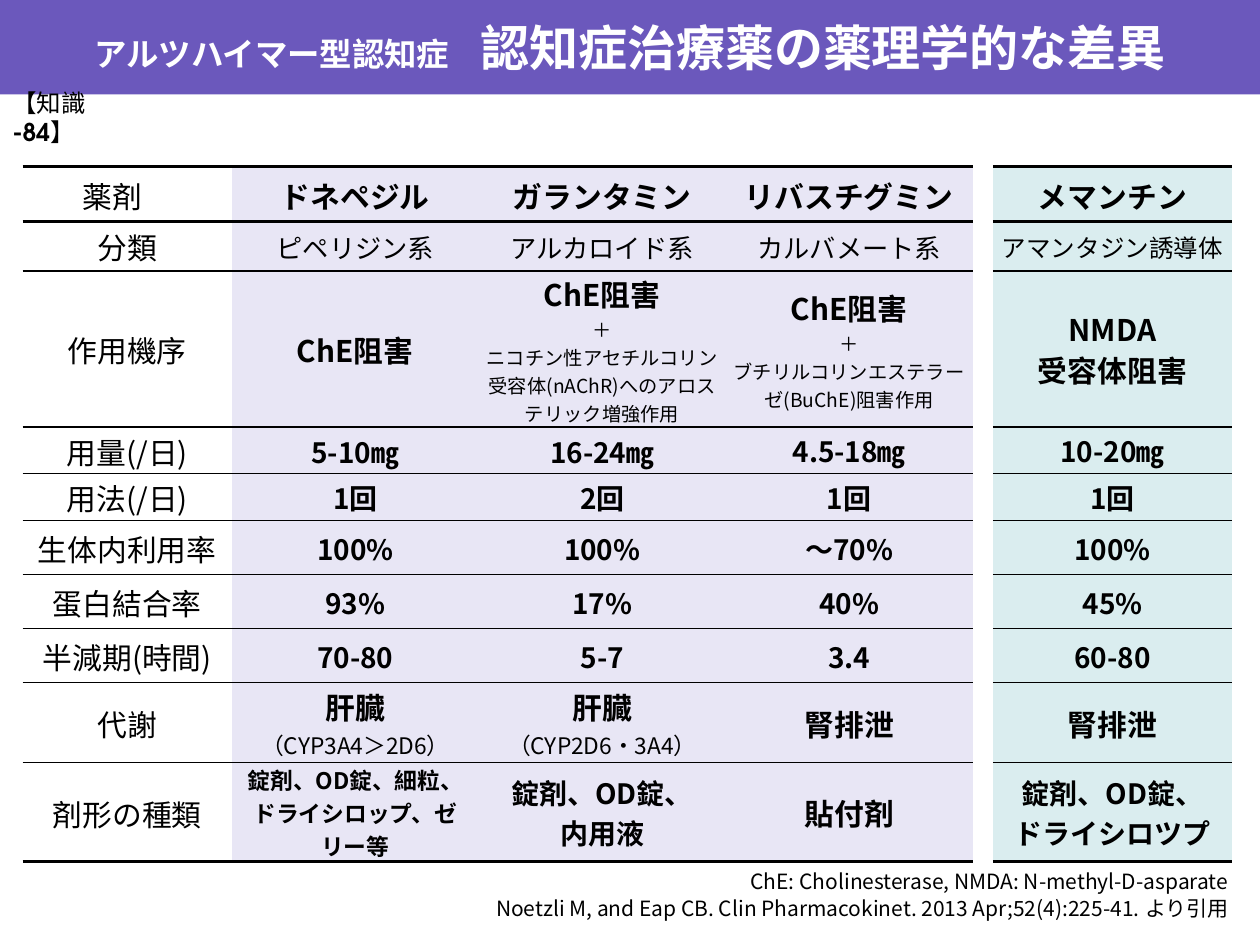
import pptx
import pptx.dml.color
import pptx.enum.shapes
import pptx.enum.text
import pptx.oxml
import pptx.oxml.ns
import pptx.util
from pptx.util import Inches

FONT = "Noto Sans CJK JP"
LABEL_FONT = "TeX Gyre Adventor"
BLACK, WHITE, PURPLE = "000000", "FFFFFF", "6B58BC"
LILAC, TEAL = "E8E6F5", "DAEDEF"
PLAIN_TABLE_STYLE = "{2D5ABB26-0587-4C30-8999-92F81FD0307C}"
ALIGN = pptx.enum.text.PP_ALIGN
MIDDLE = pptx.enum.text.MSO_ANCHOR.MIDDLE

COLUMN_WIDTHS = [1.66, 1.96, 1.96, 1.96, 0.16, 1.9]
COLUMN_FILLS = [None, LILAC, LILAC, LILAC, None, TEAL]
GAP_COLUMN = 4
ROW_HEIGHTS = [0.44, 0.39, 1.13, 0.37, 0.37, 0.43, 0.43, 0.43, 0.63, 0.62]
RULE_WIDTHS = [2.25, 2.25, 1, 1, 0.75, 0.75, 0.75, 0.75, 0.75, 0.5, 2.25]


def color(value):
    return pptx.dml.color.RGBColor.from_string(value)


def plain(size, *texts):
    return [(text, size, False) for text in texts]


def bold(size, *texts):
    return [(text, size, True) for text in texts]


def bold_each(size, *texts):
    return [bold(size, text) for text in texts]


DRUG_ROWS = [
    ("薬剤　", bold_each(17, "ドネペジル", "ガランタミン", "リバスチグミン", "メマンチン")),
    ("分類", [
        plain(15, "ピペリジン系"),
        plain(15, "アルカロイド系"),
        plain(15, "カルバメート系"),
        plain(14, "アマンタジン誘導体"),
    ]),
    ("作用機序", [
        bold(17, "ChE阻害"),
        bold(17, "ChE阻害") + plain(11, "＋", "ニコチン性アセチルコリン受容体(nAChR)へのアロステリック増強作用"),
        bold(17, "ChE阻害") + plain(11, "＋", "ブチリルコリンエステラーゼ(BuChE)阻害作用"),
        bold(17, "NMDA", "受容体阻害"),
    ]),
    ("用量(/日)", bold_each(16, "5-10㎎", "16-24㎎", "4.5-18㎎", "10-20㎎")),
    ("用法(/日)", bold_each(16, "1回", "2回", "1回", "1回")),
    ("生体内利用率", bold_each(16, "100%", "100%", "～70%", "100%")),
    ("蛋白結合率", bold_each(16, "93%", "17%", "40%", "45%")),
    ("半減期(時間)", bold_each(16, "70-80", "5-7", "3.4", "60-80")),
    ("代謝", [
        bold(17, "肝臓") + plain(13, "（CYP3A4＞2D6）"),
        bold(17, "肝臓") + plain(13, "（CYP2D6・3A4）"),
        bold(17, "腎排泄"),
        bold(17, "腎排泄"),
    ]),
    ("剤形の種類", [
        bold(13, "錠剤、OD錠、細粒、", "ドライシロップ、ゼリー等"),
        bold(16, "錠剤、OD錠、", "内用液"),
        bold(17, "貼付剤"),
        bold(16, "錠剤、OD錠、", "ドライシロツプ"),
    ]),
]


def add_run(paragraph, text, size, is_bold=False, value=BLACK, font=FONT):
    run = paragraph.add_run()
    run.text = text
    run.font.size = pptx.util.Pt(size)
    run.font.bold = is_bold
    run.font.color.rgb = color(value)
    run.font.name = font
    east_asian = pptx.oxml.parse_xml(
        f'<a:ea {pptx.oxml.ns.nsdecls("a")} typeface="{font}"/>')
    run.font._element.find(pptx.oxml.ns.qn("a:latin")).addnext(east_asian)


def add_text_box(slide, left, top, width, height, align, runs):
    box = slide.shapes.add_textbox(
        Inches(left), Inches(top), Inches(width), Inches(height))
    box.text_frame.word_wrap = True
    paragraph = box.text_frame.paragraphs[0]
    paragraph.alignment = align
    for run in runs:
        add_run(paragraph, *run)
    return box


def add_title_band(slide):
    band = slide.shapes.add_shape(
        pptx.enum.shapes.MSO_SHAPE.RECTANGLE, 0, 0, Inches(10), Inches(0.75))
    band.shadow.inherit = False
    band.fill.solid()
    band.fill.fore_color.rgb = color(PURPLE)
    band.line.fill.background()
    band.text_frame.vertical_anchor = MIDDLE
    paragraph = band.text_frame.paragraphs[0]
    paragraph.alignment = ALIGN.CENTER
    for text, size in [("アルツハイマー型認知症", 18.5), ("　", 18),
                       ("認知症治療薬の薬理学的な差異", 28)]:
        add_run(paragraph, text, size, True, WHITE)


def set_rules(cell, top, bottom):
    properties = cell._tc.get_or_add_tcPr()
    for index, (side, width) in enumerate([("lnT", top), ("lnB", bottom)]):
        rule = pptx.oxml.parse_xml(
            f'<a:{side} {pptx.oxml.ns.nsdecls("a")} w="{pptx.util.Pt(width)}">'
            f'<a:solidFill><a:srgbClr val="{BLACK}"/></a:solidFill></a:{side}>')
        properties.insert(index, rule)


def fill_cell(cell, lines, fill, spacing):
    cell.vertical_anchor = MIDDLE
    cell.margin_left = cell.margin_right = cell.margin_top = Inches(0.01)
    cell.margin_bottom = 0
    if fill:
        cell.fill.solid()
        cell.fill.fore_color.rgb = color(fill)
    else:
        cell.fill.background()
    for index, line in enumerate(lines):
        frame = cell.text_frame
        paragraph = frame.add_paragraph() if index else frame.paragraphs[0]
        paragraph.alignment = ALIGN.CENTER
        paragraph.line_spacing = spacing
        add_run(paragraph, *line)


def line_spacing(row, column):
    if row == 0 or (row, column) == (9, 0):
        return 1.05
    if (column == 5 and row <= 3) or (row, column) == (3, 3):
        return 0.95
    return 1.0


def add_drug_table(slide):
    frame = slide.shapes.add_table(
        len(ROW_HEIGHTS), len(COLUMN_WIDTHS), Inches(0.18), Inches(1.32),
        Inches(sum(COLUMN_WIDTHS)), Inches(sum(ROW_HEIGHTS)))
    table = frame.table
    table.first_row = table.horz_banding = False
    table._tbl.tblPr.find(pptx.oxml.ns.qn("a:tableStyleId")).text = PLAIN_TABLE_STYLE
    for column, width in zip(table.columns, COLUMN_WIDTHS):
        column.width = Inches(width)
    for row, (label, drugs) in enumerate(DRUG_ROWS):
        table.rows[row].height = Inches(ROW_HEIGHTS[row])
        contents = [plain(17, label), *drugs]
        contents.insert(GAP_COLUMN, plain(10, ""))
        for column, lines in enumerate(contents):
            cell = table.cell(row, column)
            fill_cell(cell, lines, COLUMN_FILLS[column], line_spacing(row, column))
            if column != GAP_COLUMN:
                set_rules(cell, RULE_WIDTHS[row], RULE_WIDTHS[row + 1])


def main():
    presentation = pptx.Presentation()
    presentation.slide_width = Inches(10)
    presentation.slide_height = Inches(7.5)
    slide = presentation.slides.add_slide(presentation.slide_layouts[6])
    add_drug_table(slide)
    abbreviations = add_text_box(
        slide, 1.64, 6.88, 8.21, 0.26, ALIGN.RIGHT,
        [("ChE: Cholinesterase, NMDA: N-methyl-D-asparate", 12)])
    abbreviations.text_frame.paragraphs[0].line_spacing = 0.8
    add_text_box(
        slide, 1.78, 7.06, 8.07, 0.3, ALIGN.RIGHT,
        [("Noetzli M, and Eap CB. Clin Pharmacokinet. 2013 Apr;52(4):225-41. より引用", 12)])
    add_title_band(slide)
    section = add_text_box(
        slide, 0, 0.76, 1.28, 0.34, ALIGN.LEFT,
        [("【知識 ", 14), ("-84", 14, True, BLACK, LABEL_FONT), ("】", 14)])
    section.text_frame.vertical_anchor = MIDDLE
    presentation.save("out.pptx")


if __name__ == "__main__":
    main()
